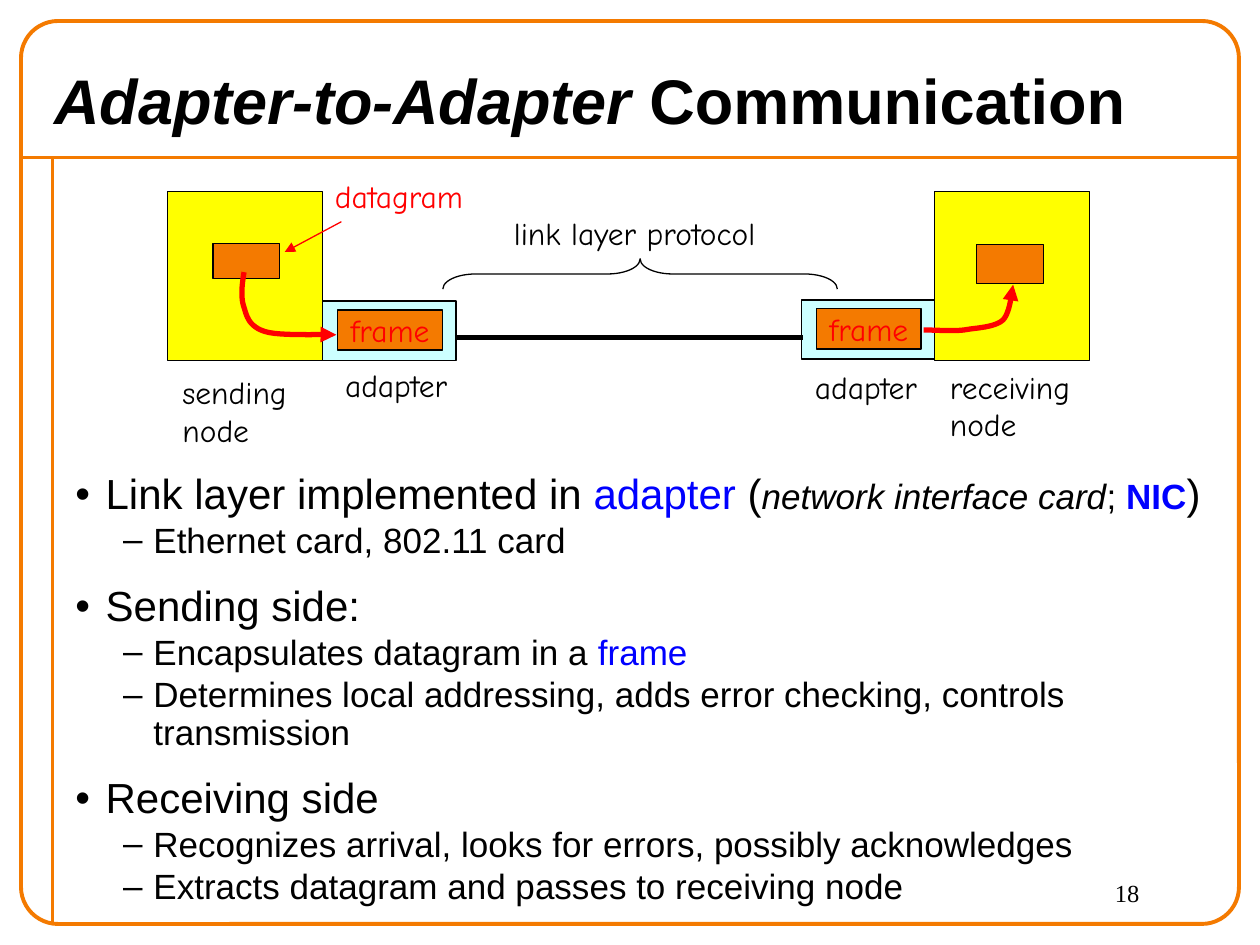
from lxml import etree
from pptx import Presentation
from pptx.dml.color import RGBColor
from pptx.enum.shapes import MSO_CONNECTOR, MSO_SHAPE
from pptx.enum.text import MSO_ANCHOR, PP_ALIGN
from pptx.oxml.ns import qn
from pptx.util import Pt

STRAIGHT = MSO_CONNECTOR.STRAIGHT
RECTANGLE = MSO_SHAPE.RECTANGLE
ROUNDED = MSO_SHAPE.ROUNDED_RECTANGLE
BRACE = MSO_SHAPE.LEFT_BRACE
TOP, MIDDLE = MSO_ANCHOR.TOP, MSO_ANCHOR.MIDDLE
LEFT, CENTER = PP_ALIGN.LEFT, PP_ALIGN.CENTER

ORANGE, YELLOW, CYAN = "F47A00", "FFFF00", "CCFFFF"
BLACK, RED, BLUE = "000000", "FF0000", "0000FF"
HAND = "Comic Neue"

TITLE = [[("Adapter-to-Adapter ", {"italic": True}), ("Communication", {})]]
SMALL = {"size": 20}
BODY = [
    (0, [("Link layer implemented in ", {}), ("adapter ", {"color": BLUE}), ("(", {}),
         ("network interface card", {"size": 20, "italic": True}), ("; ", SMALL),
         ("NIC", {"size": 20, "color": BLUE, "bold": True}), (")", {})]),
    (1, [("Ethernet card, 802.11 card", SMALL)]),
    (0, [("Sending side:", {})]),
    (1, [("Encapsulates datagram in a ", SMALL), ("frame", {"size": 20, "color": BLUE})]),
    (1, [("Determines local addressing, adds error checking, controls transmission", SMALL)]),
    (0, [("Receiving side", {})]),
    (1, [("Recognizes arrival, looks for errors, possibly acknowledges", SMALL)]),
    (1, [("Extracts datagram and passes to receiving node", SMALL)]),
]
LEVELS = [
    {"bullet": "•", "margin": 17.3, "before": 14},
    {"bullet": "–", "margin": 44.6, "before": 2.5},
]
HANGING = 17.3

NODES = [(95.8, (121.7, 139, 38.2, 20.2)), (534.2, (558, 139.7, 38.2, 22.3))]
ADAPTERS = [(184.3, 172.1), (457.9, 171.4)]
LABELS = [
    (["sending", "node"], (97.2, 209.5, 77, 50.4), BLACK),
    (["receiving", "node"], (535.7, 206.6, 90, 50.4), BLACK),
    (["adapter"], (190.1, 205.9, 80.6, 28.8), BLACK),
    (["adapter"], (458.6, 206.6, 80.6, 28.8), BLACK),
    (["datagram"], (184.3, 97.9, 93.6, 28.8), RED),
    (["link layer protocol"], (286.6, 118.8, 165.6, 28.8), BLACK),
]
CURVES = [
    [(139.5, 155.5), (138.2, 162.7), (137.5, 170.6), (139.5, 175.7), (141.1, 181.4),
     (142.6, 186.5), (151.2, 189.4), (159.8, 192.2), (185, 190.8), (192.2, 191.3)],
    [(527.8, 188.6), (535.7, 188.6), (543.6, 189.4), (550.8, 188.6), (558.7, 187.2),
     (568.1, 187.2), (573.1, 182.9), (577.4, 178.6), (578.2, 165.6), (578.9, 162.7)],
]
CURVE_STEPS = 12


def color_of(value):
    return RGBColor.from_string(value)


def points(values):
    return [Pt(value) for value in values]


def fill_text(box, paragraphs, font="Arial", size=18, color=BLACK, bold=False,
              anchor=TOP, align=LEFT, wrap=True):
    frame = box.text_frame
    frame.word_wrap = wrap
    frame.vertical_anchor = anchor
    for index, spans in enumerate(paragraphs):
        para = frame.paragraphs[0] if index == 0 else frame.add_paragraph()
        para.alignment = align
        for text, style in spans:
            span = para.add_run()
            span.text = text
            span.font.name = font
            span.font.size = Pt(style.get("size", size))
            span.font.bold = style.get("bold", bold)
            span.font.italic = style.get("italic", False)
            span.font.color.rgb = color_of(style.get("color", color))
    return frame


def add_text(page, place, paragraphs, **style):
    return fill_text(page.shapes.add_textbox(*points(place)), paragraphs, **style)


def style_shape(shape, fill, line, width):
    shape.shadow.inherit = False
    if fill:
        shape.fill.solid()
        shape.fill.fore_color.rgb = color_of(fill)
    else:
        shape.fill.background()
    shape.line.color.rgb = color_of(line)
    shape.line.width = Pt(width)


def add_shape(page, kind, place, fill=None, line=BLACK, width=0.75):
    shape = page.shapes.add_shape(kind, *points(place))
    style_shape(shape, fill, line, width)
    return shape


def add_arrowhead(shape):
    etree.SubElement(shape.line._get_or_add_ln(), qn("a:tailEnd"), type="triangle")


def add_line(page, ends, color, width):
    line = page.shapes.add_connector(STRAIGHT, *points(ends))
    line.line.color.rgb = color_of(color)
    line.line.width = Pt(width)
    etree.SubElement(line._element.spPr, qn("a:effectLst"))
    return line


def bezier(controls, t):
    weights = ((1 - t) ** 3, 3 * t * (1 - t) ** 2, 3 * t * t * (1 - t), t ** 3)
    return tuple(sum(w * c[axis] for w, c in zip(weights, controls)) for axis in (0, 1))


def add_curve(page, controls):
    track = [bezier(controls[start:start + 4], step / CURVE_STEPS)
             for start in range(0, len(controls) - 1, 3)
             for step in range(1, CURVE_STEPS + 1)]
    builder = page.shapes.build_freeform(*points(controls[0]))
    builder.add_line_segments([points(spot) for spot in track], close=False)
    curve = builder.convert_to_shape()
    style_shape(curve, None, RED, 3)
    add_arrowhead(curve)


def add_bullets(frame):
    for para, (level, _) in zip(frame.paragraphs, BODY):
        rule = LEVELS[level]
        para.level = level
        para.line_spacing = 0.9
        para.space_before = Pt(rule["before"])
        properties = para._p.get_or_add_pPr()
        properties.set("marL", str(Pt(rule["margin"])))
        properties.set("indent", str(-Pt(HANGING)))
        etree.SubElement(properties, qn("a:buFont"), typeface="Arial")
        etree.SubElement(properties, qn("a:buChar"), char=rule["bullet"])


def add_border(page):
    add_line(page, (12, 90, 708, 90), ORANGE, 2.25)
    add_line(page, (30, 90, 30, 528), ORANGE, 2.25)
    border = add_shape(page, ROUNDED, (12, 12, 696, 516), line=ORANGE, width=2.25)
    border.adjustments[0] = 0.041


def add_diagram(page):
    for left, top in ADAPTERS:
        add_shape(page, RECTANGLE, (left, top, 76.3, 33.8), CYAN)
        frame_box = add_shape(page, RECTANGLE, (left + 8.7, top + 5, 59.8, 23), ORANGE)
        fill_text(frame_box, [[("frame", {})]], font=HAND, color=RED,
                  anchor=MIDDLE, align=CENTER, wrap=False)
    add_line(page, (259.9, 193, 458.6, 193), BLACK, 3)
    for left, datagram in NODES:
        add_shape(page, RECTANGLE, (left, 109.4, 88.6, 96.5), YELLOW)
        add_shape(page, RECTANGLE, datagram, ORANGE)
    brace = add_shape(page, BRACE, (357.1, 43.9, 17.3, 225.4))
    brace.adjustments[0] = 1.08
    brace.rotation = 90
    add_arrowhead(add_line(page, (195.1, 126.7, 162.7, 144), RED, 0.75))
    for controls in CURVES:
        add_curve(page, controls)
    for lines, place, color in LABELS:
        add_text(page, place, [[(line, {})] for line in lines],
                 font=HAND, color=color, wrap=False)


def main():
    deck = Presentation()
    deck.slide_width, deck.slide_height = Pt(720), Pt(540)
    page = deck.slides.add_slide(deck.slide_layouts[6])
    add_border(page)
    add_text(page, (630, 498, 72, 30), [[("18", {})]], font="Times New Roman", size=14)
    add_text(page, (24, 30, 678, 54), TITLE, size=36, bold=True, anchor=MIDDLE)
    add_bullets(add_text(page, (36, 267, 666, 252), [spans for _, spans in BODY], size=24))
    add_diagram(page)
    deck.save("out.pptx")


if __name__ == "__main__":
    main()
